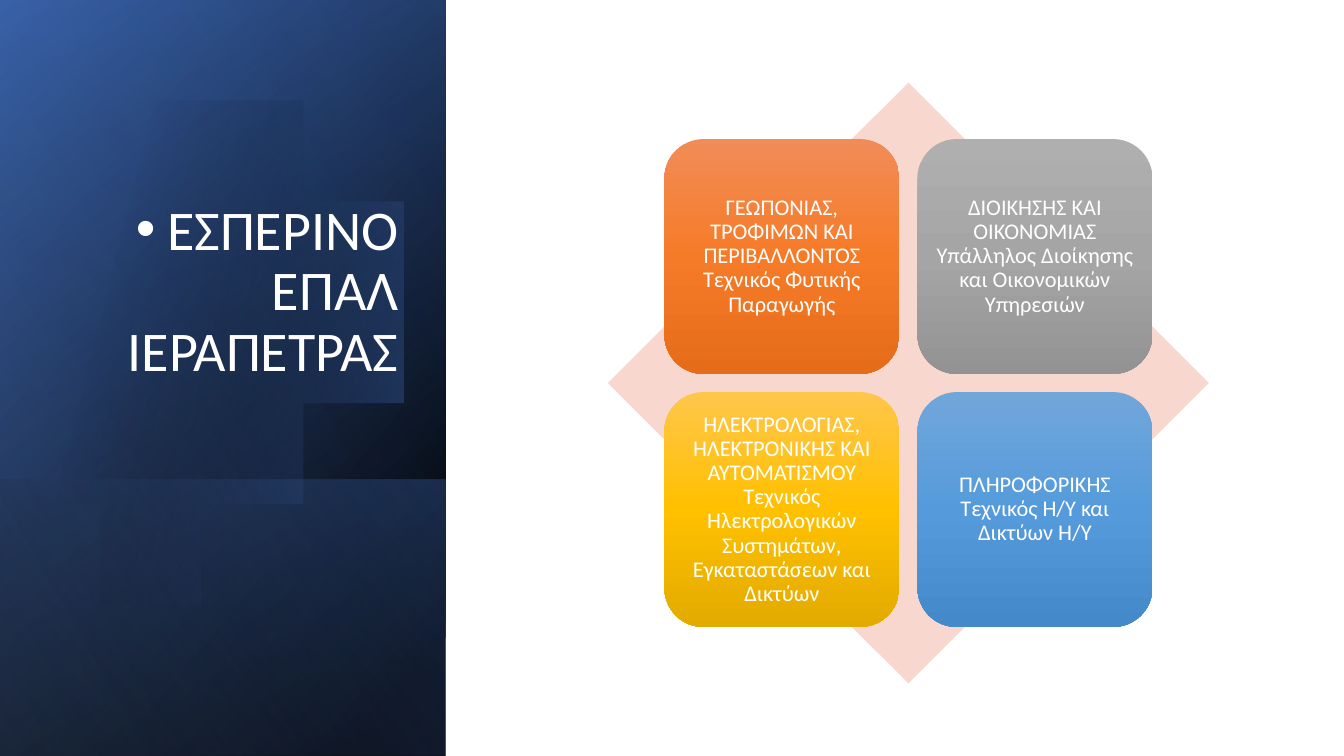
import math
from copy import deepcopy

from lxml import etree
from pptx import Presentation
from pptx import util as u
from pptx.dml.color import RGBColor
from pptx.enum import shapes, text
from pptx.oxml import ns

COLORS = {
    "white": "FFFFFF",
    "black": "000000",
    "navy": "2F5597",
    "blue": "4472C4",
    "pale_blue": "8FAADC",
    "diamond": "F8D7CE",
}
FONT = "Calibri"
PANEL = (0, 0, 4.42, 7.5)
PANEL_FOOT = (0, 4.76, 4.42, 2.74)
TITLE = (0.64, 1.84, 3.41, 2.01)
MATRIX = (6.03, 0.82, 5.96, 5.96)
SECTORS = [
    ("ΓΕΩΠΟΝΙΑΣ, ΤΡΟΦΙΜΩΝ ΚΑΙ ΠΕΡΙΒΑΛΛΟΝΤΟΣ\nΤεχνικός Φυτικής Παραγωγής",
     ("F18C57", "F67B28", "E56C19")),
    ("ΔΙΟΙΚΗΣΗΣ ΚΑΙ ΟΙΚΟΝΟΜΙΑΣ\nΥπάλληλος Διοίκησης και Οικονομικών Υπηρεσιών",
     ("AFAFAF", "A5A5A5", "939393")),
    ("ΗΛΕΚΤΡΟΛΟΓΙΑΣ, ΗΛΕΚΤΡΟΝΙΚΗΣ ΚΑΙ ΑΥΤΟΜΑΤΙΣΜΟΥ\n"
     "Τεχνικός Ηλεκτρολογικών Συστημάτων, Εγκαταστάσεων και Δικτύων",
     ("FFC64B", "FFC000", "E3AB00")),
    ("ΠΛΗΡΟΦΟΡΙΚΗΣ\nΤεχνικός Η/Υ και Δικτύων Η/Υ",
     ("71A6DB", "559BDB", "448ACA")),
]


def inches(box):
    return [u.Inches(value) for value in box]


def clear_style(shape):
    shape.shadow.inherit = False
    shape.line.fill.background()
    shape.fill.background()


def fill_gradient(shape, stops, angle):
    clear_style(shape)
    gradient = etree.Element(ns.qn("a:gradFill"), rotWithShape="1")
    stop_list = etree.SubElement(gradient, ns.qn("a:gsLst"))
    for position, color, opacity in stops:
        stop = etree.SubElement(stop_list, ns.qn("a:gs"), pos=str(position * 1000))
        tint = etree.SubElement(stop, ns.qn("a:srgbClr"), val=color)
        if opacity < 100:
            etree.SubElement(tint, ns.qn("a:alpha"), val=str(opacity * 1000))
    etree.SubElement(gradient, ns.qn("a:lin"), ang=str(angle * 60000), scaled="0")
    properties = shape.fill._xPr
    properties.replace(properties.find(ns.qn("a:noFill")), gradient)


def write_text(shape, words, size, align, anchor, inset=None, bullet=None, indent=0):
    frame = shape.text_frame
    frame.word_wrap = True
    frame.vertical_anchor = anchor
    if inset is not None:
        frame.margin_left = frame.margin_right = u.Inches(inset)
        frame.margin_top = frame.margin_bottom = u.Inches(inset)
    para = frame.paragraphs[0]
    para.text = words
    para.alignment = align
    para.line_spacing = 0.9
    for span in para.runs:
        span.font.size = u.Pt(size)
        span.font.name = FONT
        span.font.color.rgb = RGBColor.from_string(COLORS["white"])
    for line_break in para._p.findall(ns.qn("a:br")):
        line_break.append(deepcopy(para.runs[0]._r.rPr))
    if bullet:
        properties = para._p.get_or_add_pPr()
        properties.set("marL", str(u.Inches(indent)))
        properties.set("indent", str(-u.Inches(indent)))
        etree.SubElement(properties, ns.qn("a:buFont"), typeface="Arial")
        etree.SubElement(properties, ns.qn("a:buChar"), char=bullet)


def add_turned_panel(page, box, stops, angle):
    left, top, width, height = box
    shift = (width - height) / 2
    panel = page.shapes.add_shape(
        shapes.MSO_SHAPE.RECTANGLE,
        *inches((left + shift, top - shift, height, width)))
    panel.rotation = 90
    panel._element.spPr.get_or_add_xfrm().set("flipH", "1")
    fill_gradient(panel, stops, angle)


def add_cut_circle(page, box):
    left, top = box[0], box[1]
    center_x, center_y, radius = 1.44, 3.38, 2.28
    limit = math.acos(-center_x / radius)
    steps = 120
    angles = [limit * (2 * step / steps - 1) for step in range(steps + 1)]
    points = [(left + center_x + radius * math.cos(angle),
               top + center_y + radius * math.sin(angle)) for angle in angles]
    builder = page.shapes.build_freeform(*points[0], scale=u.Inches(1))
    builder.add_line_segments(points[1:], close=True)
    fill_gradient(builder.convert_to_shape(),
                  [(29, COLORS["black"], 0), (100, COLORS["blue"], 43)], 14)


def add_title_panel(page, box):
    black = COLORS["black"]
    add_turned_panel(page, box, [(8, black, 100), (100, COLORS["navy"], 100)], 50)
    add_turned_panel(page, box, [(0, black, 0), (99, COLORS["blue"], 46)], 30)
    add_turned_panel(page, PANEL_FOOT, [(2, COLORS["blue"], 29), (100, black, 30)], 130)
    add_cut_circle(page, box)
    add_turned_panel(page, box, [(0, black, 0), (99, COLORS["pale_blue"], 11)], 120)
    title = page.shapes.add_textbox(*inches(TITLE))
    write_text(title, "ΕΣΠΕΡΙΝΟ ΕΠΑΛ ΙΕΡΑΠΕΤΡΑΣ", size=40, align=text.PP_ALIGN.RIGHT,
               anchor=text.MSO_ANCHOR.BOTTOM, bullet="•", indent=0.31)


def add_sector_matrix(page, box):
    left, top, width, height = box
    diamond = page.shapes.add_shape(shapes.MSO_SHAPE.DIAMOND, *inches(box))
    clear_style(diamond)
    diamond.fill.solid()
    diamond.fill.fore_color.rgb = RGBColor.from_string(COLORS["diamond"])
    side, gap = 2.33, 0.18
    start_x = left + (width - gap) / 2 - side
    start_y = top + (height - gap) / 2 - side
    for index, (words, shades) in enumerate(SECTORS):
        row, column = divmod(index, 2)
        card = page.shapes.add_shape(
            shapes.MSO_SHAPE.ROUNDED_RECTANGLE,
            *inches((start_x + column * (side + gap),
                     start_y + row * (side + gap), side, side)))
        stops = [(50 * order, shade, 100) for order, shade in enumerate(shades)]
        fill_gradient(card, stops, 90)
        write_text(card, words, size=16, align=text.PP_ALIGN.CENTER,
                   anchor=text.MSO_ANCHOR.MIDDLE, inset=0.07)


def main():
    deck = Presentation()
    deck.slide_width = u.Inches(13.33)
    deck.slide_height = u.Inches(7.5)
    page = deck.slides.add_slide(deck.slide_layouts[6])
    add_title_panel(page, PANEL)
    add_sector_matrix(page, MATRIX)
    deck.save("out.pptx")


if __name__ == "__main__":
    main()
